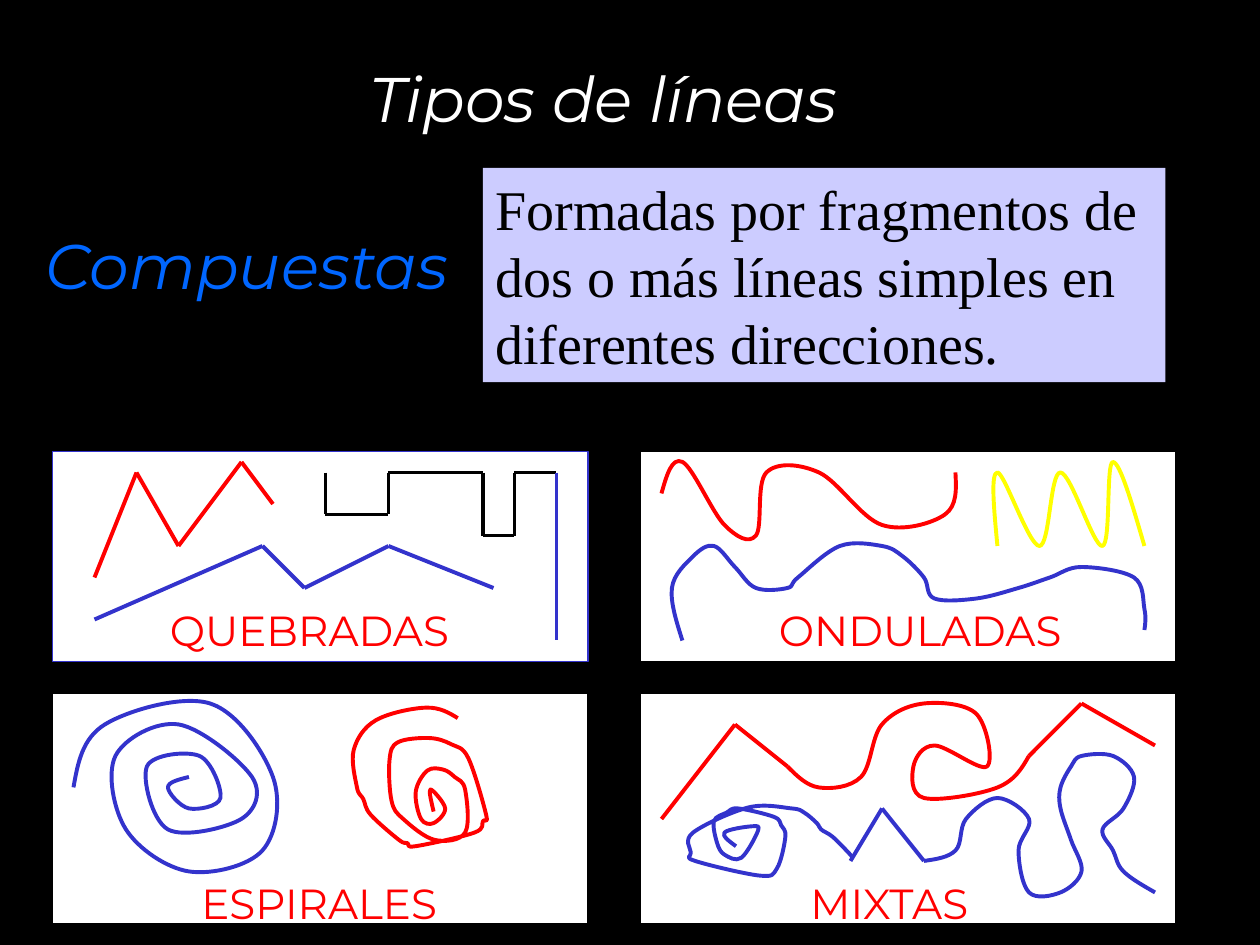
from itertools import pairwise

from lxml import etree
from pptx import Presentation
from pptx import util as u
from pptx.dml.color import RGBColor
from pptx.enum import shapes, text
from pptx.oxml import ns

THEME = {
    "background": "000000", "title": "FFFFFF", "subtitle": "0066FF",
    "note_fill": "CCCCFF", "panel": "FFFFFF", "label": "FF0000",
    "red": "FF0000", "blue": "3333CC", "black": "000000", "yellow": "FFFF00",
    "sans": "Montserrat", "serif": "Times New Roman",
    "heading_size": 36, "note_size": 32, "label_size": 24,
    "stroke": 2.25, "border": 0.75,
}


def grid(cells):
    """Length in steps of a twelfth of an inch."""
    return u.Inches(cells / 12)


def rgb(name):
    return RGBColor.from_string(THEME[name])


def write(shape, words, font, size, color, italic=False, wrap=True,
          align=text.PP_ALIGN.LEFT):
    frame = shape.text_frame
    frame.text = words
    frame_format = {"word_wrap": wrap, "auto_size": text.MSO_AUTO_SIZE.NONE,
                    "vertical_anchor": text.MSO_ANCHOR.TOP}
    for key, value in frame_format.items():
        setattr(frame, key, value)
    paragraph = frame.paragraphs[0]
    paragraph.alignment = align
    run_font = paragraph.runs[0].font
    font_format = {"name": THEME[font], "size": u.Pt(THEME[size]), "italic": italic}
    for key, value in font_format.items():
        setattr(run_font, key, value)
    run_font.color.rgb = rgb(color)


def add_box(slide, box, fill, border=None):
    rect = slide.shapes.add_shape(shapes.MSO_SHAPE.RECTANGLE, *map(grid, box))
    rect.shadow.inherit = False
    rect.fill.solid()
    rect.fill.fore_color.rgb = rgb(fill)
    if border:
        rect.line.color.rgb = rgb(border)
        rect.line.width = u.Pt(THEME["border"])
    else:
        rect.line.fill.background()
    return rect


def pen(shape, color):
    shape.line.color.rgb = rgb(color)
    shape.line.width = u.Pt(THEME["stroke"])


def broken(slide, color, points):
    """A chain of straight lines."""
    for start, end in pairwise(points):
        segment = slide.shapes.add_connector(
            shapes.MSO_CONNECTOR.STRAIGHT, *map(grid, start + end))
        pen(segment, color)
        etree.SubElement(segment._element.spPr, ns.qn("a:effectLst"))


def bezier_points(knots):
    """Two handles and an end for each piece of a smooth curve."""
    def mix(a, b, share):
        return tuple(p + (q - p) * share for p, q in zip(a, b))

    def handle(i, sign):
        return tuple(k + sign * (after - before) / 6 for k, before, after
                     in zip(knots[i], knots[i - 1], knots[i + 1]))

    last = len(knots) - 1
    points = []
    for i in range(last):
        leave = handle(i, 1) if i else None
        arrive = handle(i + 1, -1) if i + 1 < last else mix(knots[last], leave, 0.5)
        points += [leave or mix(knots[0], arrive, 0.5), arrive, knots[i + 1]]
    return points


def curved(slide, color, knots):
    """A smooth open curve through the knots."""
    builder = slide.shapes.build_freeform(*map(grid, knots[0]))
    builder.add_line_segments(
        [tuple(map(grid, p)) for p in bezier_points(knots)], close=False)
    curve = builder.convert_to_shape()
    curve.shadow.inherit = False
    curve.fill.background()
    pen(curve, color)
    # Each run of three points becomes one cubic piece
    outline = next(curve._element.iter(ns.qn("a:path")))
    pieces = outline.findall(ns.qn("a:lnTo"))
    for first in range(0, len(pieces), 3):
        cubic = etree.SubElement(outline, ns.qn("a:cubicBezTo"))
        for piece in pieces[first:first + 3]:
            cubic.append(piece[0])
            outline.remove(piece)


def add_heading(slide):
    title = slide.shapes.title
    place = {"left": 1.58, "top": 0.42, "width": 6.42, "height": 0.67}
    for key, value in place.items():
        setattr(title, key, u.Inches(value))
    subtitle = slide.shapes.add_textbox(*map(u.Inches, (0.25, 1.75, 3.42, 0.71)))
    for shape, words, color in ((title, "Tipos de líneas", "title"),
                                (subtitle, "Compuestas", "subtitle")):
        write(shape, words, "sans", "heading_size", color, italic=True,
              wrap=False, align=text.PP_ALIGN.CENTER)


def add_definition(slide, box):
    note = add_box(slide, box, "note_fill")
    write(note, "Formadas por fragmentos de dos o más líneas simples en "
          "diferentes direcciones.", "serif", "note_size", "black")


def add_panel(slide, box, border, label, label_box, strokes):
    """A framed example; label and strokes count from the panel's corner."""
    left, top = box[:2]
    add_box(slide, box, "panel", border)
    x, y, width = label_box
    caption = slide.shapes.add_textbox(*map(grid, (left + x, top + y, width, 6)))
    write(caption, label, "sans", "label_size", "label")
    for draw, color, points in strokes:
        draw(slide, color, [(left + px, top + py) for px, py in points])


QUEBRADAS = [
    (broken, "red", [(4, 12), (8, 2), (12, 9), (18, 1), (21, 5)]),
    (broken, "black", [(26, 2), (26, 6), (32, 6), (32, 2), (41, 2), (41, 8),
                       (44, 8), (44, 2), (48, 2)]),
    (broken, "blue", [(48, 2), (48, 18)]),
    (broken, "blue", [(4, 16), (20, 9), (24, 13), (32, 9), (42, 13)]),
]
ONDULADAS = [
    (curved, "red", [(2, 4), (4, 1), (8, 7), (11, 8), (12, 2), (17, 2), (23, 7),
                     (29, 6), (30, 2)]),
    (curved, "blue", [(4, 18), (3, 13), (5, 10), (7, 9), (9, 11), (11, 13), (14, 13),
                      (15, 12), (19, 9), (23, 9), (25, 10), (27, 12), (28, 14),
                      (32, 14), (36, 13), (39, 12), (42, 11), (47, 12), (48, 15),
                      (48, 17)]),
    (curved, "yellow", [(34, 9), (34, 2), (38, 9), (40, 2), (44, 9), (45, 1), (48, 9)]),
]
ESPIRALES = [
    (curved, "blue", [(2, 9), (5, 3), (15, 1), (21, 8), (20, 15), (13, 17), (7, 13),
                      (6, 6), (12, 3), (19, 8), (18, 12), (11, 13), (9, 7), (14, 6),
                      (16, 10), (13, 11), (11, 9), (13, 8)]),
    (curved, "red", [(38.6, 2.4), (35.6, 1.4), (30.8, 2.6), (28.7, 5.4), (29, 9),
                     (29.6, 10.1), (30.3, 11.6), (33, 14), (33.8, 14.3), (34.6, 14.6),
                     (40.2, 13.3), (41, 12.2), (41.3, 11.6), (39.6, 6.2), (38, 4.9),
                     (35.9, 4.3), (32.9, 4.7), (32.1, 6.4), (32.3, 10.3), (33.4, 12),
                     (36.4, 14), (39.3, 13.3), (39.3, 9.2), (38.3, 8), (37.2, 7.3),
                     (35.7, 7.4), (34.6, 9.4), (35.1, 12), (36.3, 12.4), (37.4, 11),
                     (36, 9.2), (36.3, 11.3)]),
]
MIXTAS = [
    (broken, "red", [(2, 12), (9, 3), (14, 7)]),
    (curved, "red", [(14, 7), (17, 9), (21, 8), (23, 3), (27, 1), (32, 2), (33, 7),
                     (28, 5), (26, 7), (27, 10), (34, 9), (37, 6)]),
    (broken, "red", [(37, 6), (42, 1), (49, 5)]),
    (curved, "blue", [(9.1, 14.6), (8, 13.3), (10.6, 12.7), (11.2, 13.1), (9.6, 15.7),
                      (8, 15.4), (7.3, 14.3), (7, 12.2), (8.2, 11.4), (9.3, 11),
                      (12.7, 11.8), (13.4, 12.6), (13.8, 13.7), (13, 16.7),
                      (11.4, 17.4), (5.2, 16), (4.8, 15.2), (5, 13.3), (10.3, 10.9),
                      (14.4, 11), (15.6, 11.4), (16.8, 12.4), (17.2, 13),
                      (18.3, 13.7), (19.8, 15.2), (20.2, 15.7)]),
    (broken, "blue", [(20, 16), (23, 11), (27, 16)]),
    (curved, "blue", [(27, 16), (30, 15), (31, 12), (34, 10), (37, 12), (36, 15),
                      (37, 19), (40, 19), (42, 17), (41, 14), (40, 11), (40, 9),
                      (41, 7), (42, 6), (45, 6), (47, 8), (46, 11), (44, 13),
                      (45, 15), (46, 17), (49, 19)]),
]


def main():
    deck = Presentation()
    deck.slide_width, deck.slide_height = u.Inches(10), u.Inches(7.5)
    slide = deck.slides.add_slide(deck.slide_layouts[5])
    slide.background.fill.solid()
    slide.background.fill.fore_color.rgb = rgb("background")

    add_heading(slide)
    add_definition(slide, (46, 16, 65, 20.4))
    # Two columns and two rows of examples
    left, right = 5, 61
    upper, lower = (43, 51, 20), (66, 51, 22)
    add_panel(slide, (left, *upper), "blue", "QUEBRADAS", (10, 14, 32), QUEBRADAS)
    add_panel(slide, (right, *upper), "black", "ONDULADAS", (12, 14, 33), ONDULADAS)
    add_panel(slide, (left, *lower), "black", "ESPIRALES", (13, 17, 29), ESPIRALES)
    add_panel(slide, (right, *lower), "black", "MIXTAS", (15, 17, 22), MIXTAS)
    deck.save("out.pptx")


if __name__ == "__main__":
    main()
